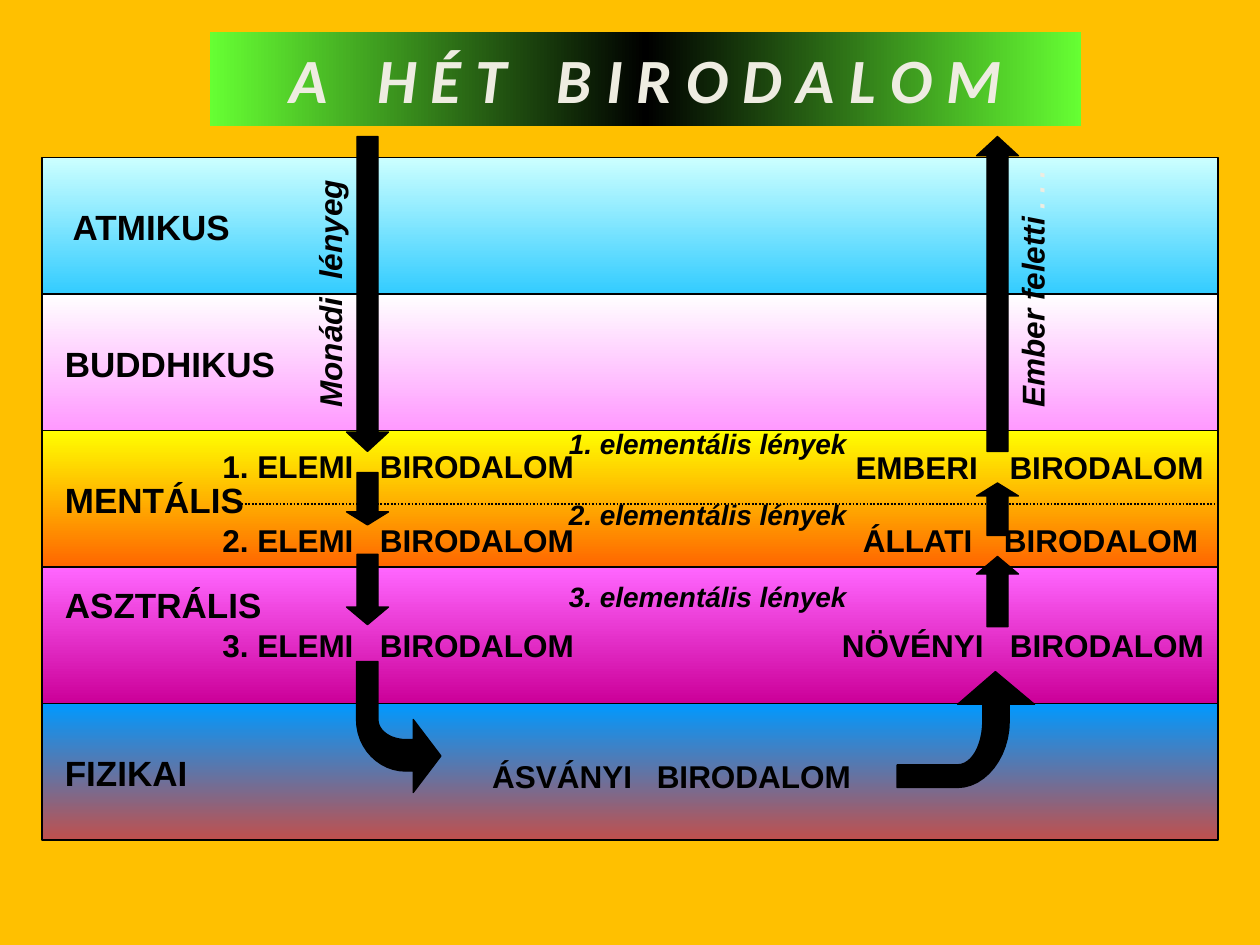
from copy import deepcopy

from lxml import etree
from pptx import Presentation
from pptx.dml.color import RGBColor
from pptx.enum import dml, shapes, text
from pptx.oxml.ns import qn
from pptx.util import Emu, Inches, Pt

COLUMNS, ROWS = 120, 90
BLACK, CREAM = "000000", "EEECE1"


def color(hex_code):
    return RGBColor.from_string(hex_code)


def write(paragraph, words, size, font="Arial", ink=BLACK, italic=False, gap=0):
    """Write bold words; each "|" becomes one space widened by gap points."""
    for index, part in enumerate(words.split("|")):
        for piece in ([" ", part] if index else [part]):
            run = paragraph.add_run()
            run.text = piece
            run.font.name, run.font.size = font, Pt(size)
            run.font.bold, run.font.italic = True, italic
            run.font.color.rgb = color(ink)
            if piece == " ":
                run.font._element.set("spc", str(gap * 100))


def curve(start, first, second, end, steps=12):
    """Points along a cubic curve, after its start."""
    points = []
    for step in range(1, steps + 1):
        t = step / steps
        weights = (1 - t) ** 3, 3 * t * (1 - t) ** 2, 3 * t ** 2 * (1 - t), t ** 3
        points.append(tuple(
            sum(w * p[axis] for w, p in zip(weights, (start, first, second, end)))
            for axis in (0, 1)))
    return points


class Diagram:
    line_width = 0.75
    text_heights = {20: 5.2, 18: 4.8, 16: 4.4}

    def __init__(self, deck, background):
        self.cell_w = deck.slide_width / COLUMNS
        self.cell_h = deck.slide_height / ROWS
        self.slide = deck.slides.add_slide(deck.slide_layouts[5])
        self.slide.background.fill.solid()
        self.slide.background.fill.fore_color.rgb = color(background)

    def place(self, col, row, cols, rows):
        return [Emu(round(v)) for v in (col * self.cell_w, row * self.cell_h,
                                        cols * self.cell_w, rows * self.cell_h)]

    def gradient(self, shape, colors, angle):
        shape.fill.gradient()
        shape.fill.gradient_angle = angle
        stop_list = shape._element.spPr.xpath(".//a:gsLst")[0]
        while len(stop_list) < len(colors):
            stop_list.append(deepcopy(stop_list[0]))
        for index, (stop, shade) in enumerate(zip(shape.fill.gradient_stops, colors)):
            stop.position = index / (len(colors) - 1)
            stop.color.rgb = color(shade)

    def outline(self, shape):
        shape.shadow.inherit = False
        shape.line.color.rgb = color(BLACK)
        shape.line.width = Pt(self.line_width)

    def black(self, shape):
        self.outline(shape)
        shape.fill.solid()
        shape.fill.fore_color.rgb = color(BLACK)

    def title(self, words, box, colors, **style):
        title = self.slide.shapes.title
        title.left, title.top, title.width, title.height = self.place(*box)
        self.gradient(title, colors, 0)
        frame = title.text_frame
        frame.auto_size = text.MSO_AUTO_SIZE.NONE
        frame.vertical_anchor = text.MSO_ANCHOR.MIDDLE
        frame.paragraphs[0].alignment = text.PP_ALIGN.CENTER
        write(frame.paragraphs[0], words, **style)

    def band(self, row, rows, colors):
        band = self.slide.shapes.add_shape(
            shapes.MSO_SHAPE.RECTANGLE, *self.place(4, row, 112, rows))
        self.outline(band)
        self.gradient(band, colors, 270)

    def dotted_line(self, col, row, end_col):
        left, top, width, _ = self.place(col, row, end_col - col, 0)
        line = self.slide.shapes.add_connector(
            shapes.MSO_CONNECTOR.STRAIGHT, left, top, left + width, top)
        line.line.color.rgb = color(BLACK)
        line.line.width = Pt(1)
        line.line.dash_style = dml.MSO_LINE.ROUND_DOT
        etree.SubElement(line._element.spPr, qn("a:effectLst"))

    def arrow(self, col, row, rows, head, up=False):
        kind = shapes.MSO_SHAPE.UP_ARROW if up else shapes.MSO_SHAPE.DOWN_ARROW
        arrow = self.slide.shapes.add_shape(kind, *self.place(col, row, 4, rows))
        arrow.adjustments[0], arrow.adjustments[1] = 0.5, head
        self.black(arrow)

    def bent_arrow(self, points):
        """Draw a closed outline given in inches."""
        (x, y), *rest = [(Inches(px), Inches(py)) for px, py in points]
        builder = self.slide.shapes.build_freeform(x, y)
        builder.add_line_segments(rest, close=True)
        self.black(builder.convert_to_shape())

    def label(self, words, col, row, cols, size=18, turn=0, tail="", **style):
        box = self.slide.shapes.add_textbox(
            *self.place(col, row, cols, self.text_heights[size]))
        box.rotation = turn
        frame = box.text_frame
        frame.word_wrap = True
        frame.auto_size = text.MSO_AUTO_SIZE.SHAPE_TO_FIT_TEXT
        write(frame.paragraphs[0], words, size, **style)
        if tail:
            write(frame.paragraphs[0], tail, 16, ink=CREAM, italic=True)


def main():
    deck = Presentation()
    deck.slide_width, deck.slide_height = Inches(10), Inches(7.5)
    diagram = Diagram(deck, "FFC000")

    diagram.title("A|H É T|B I R O D A L O M", (20, 3, 83, 9),
                  ("66FF33", BLACK, "66FF33"), size=36, font="Calibri",
                  ink=CREAM, italic=True, gap=20)

    # Planes: colours, name, and place of the name
    planes = [
        ("CCFFFF", "33CCFF", "ATMIKUS", 5.75, 19),
        ("FFFFFF", "FF99FF", "BUDDHIKUS", 5, 32),
        ("FFFF00", "FF6600", "MENTÁLIS", 5, 45),
        ("FF66FF", "CC0099", "ASZTRÁLIS", 5, 55),
        ("0099FF", "C0504D", "FIZIKAI", 5, 71),
    ]
    band_top, band_rows = 15, 13
    for index, (upper, lower, *_) in enumerate(planes):
        diagram.band(band_top + index * band_rows, band_rows, (upper, lower))
    diagram.dotted_line(23, 48, 116)
    for _, _, name, col, row in planes:
        diagram.label(name, col, row, 23, size=20)

    # Descending and ascending arrows
    for row, down_row, rows, head in ((13, 13, 30, 0.46), (46, 45, 5, 0.31),
                                      (53, 52.8, 6.7, 0.42)):
        diagram.arrow(33, down_row, rows, head)
        diagram.arrow(93, row, rows, head, up=True)

    # Turns into and out of the physical plane
    diagram.bent_arrow([
        (3.5, 6), (3.28, 6.29), (3.28, 6.12), (3.22, 6.12),
        *curve((3.22, 6.12), (3.01, 6.12), (2.83, 5.94), (2.83, 5.71)),
        (2.83, 5.25), (3, 5.25), (3, 5.71),
        *curve((3, 5.71), (3, 5.8), (3.1, 5.87), (3.22, 5.87)),
        (3.28, 5.87), (3.28, 5.71)])
    diagram.bent_arrow([
        (7.9, 5.33), (8.21, 5.59), (8.01, 5.59), (8.01, 5.72),
        *curve((8.01, 5.72), (8.01, 6.01), (7.82, 6.25), (7.6, 6.25)),
        (7.12, 6.25), (7.12, 6.07), (7.6, 6.07),
        *curve((7.6, 6.07), (7.71, 6.07), (7.8, 5.92), (7.8, 5.72)),
        (7.8, 5.59), (7.6, 5.59)])

    # Kingdoms
    for number, (row, being_row) in enumerate(((42, 40), (49, 46.8), (59, 54.6)), 1):
        diagram.label(f"{number}. ELEMI|BIRODALOM", 20, row, 36, gap=10)
        diagram.label(f"{number}. elementális lények", 53, being_row, 30,
                      size=16, italic=True)
    for name, col, row, cols, gap in (("ÁSVÁNYI", 45.7, 71.5, 38.3, 9),
                                      ("NÖVÉNYI", 79, 59, 37.5, 10),
                                      ("ÁLLATI", 81, 49, 35, 13),
                                      ("EMBERI", 80.3, 42.1, 36.7, 13)):
        diagram.label(f"{name}|BIRODALOM", col, row, cols, gap=gap)

    # Upright captions
    diagram.label("Monádi|lényeg", 17.9, 24.1, 27, turn=270, italic=True, gap=5)
    diagram.label("Ember feletti", 84.8, 24.1, 27, turn=270, italic=True,
                  tail=" . . .")

    deck.save("out.pptx")


if __name__ == "__main__":
    main()
